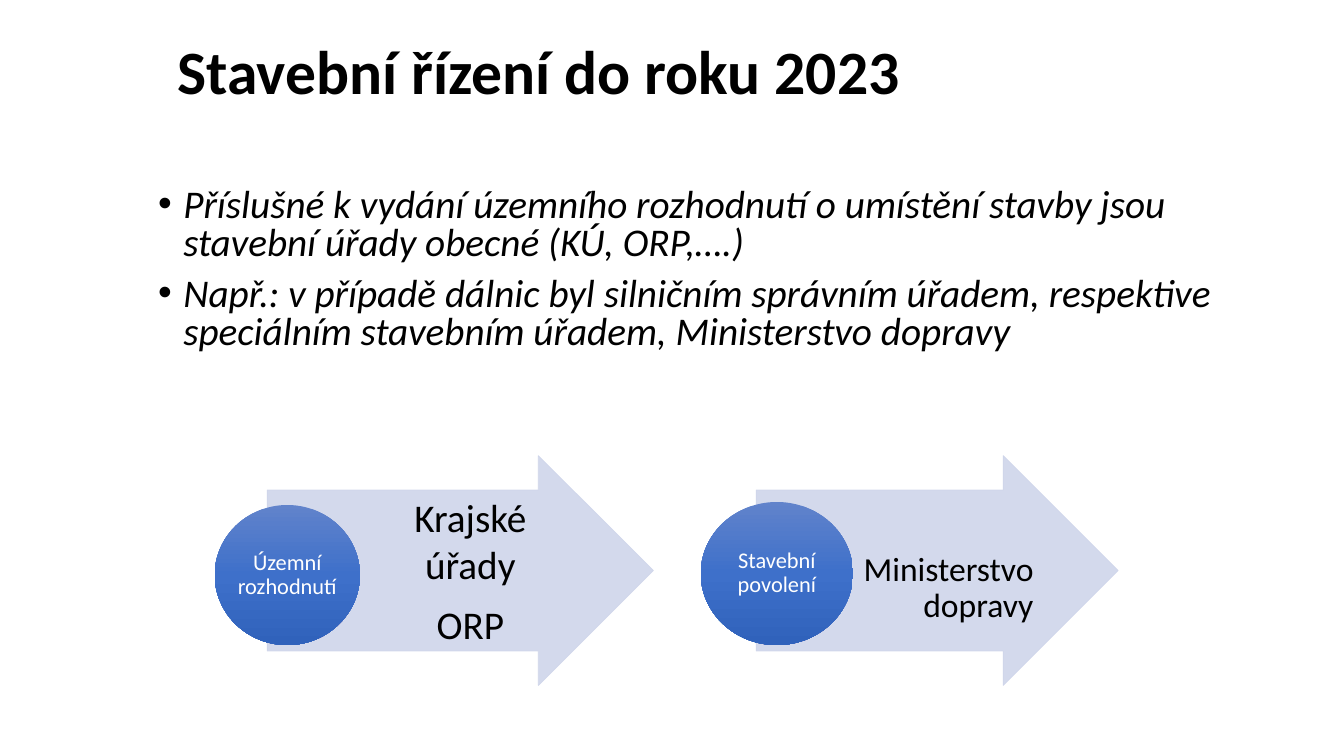
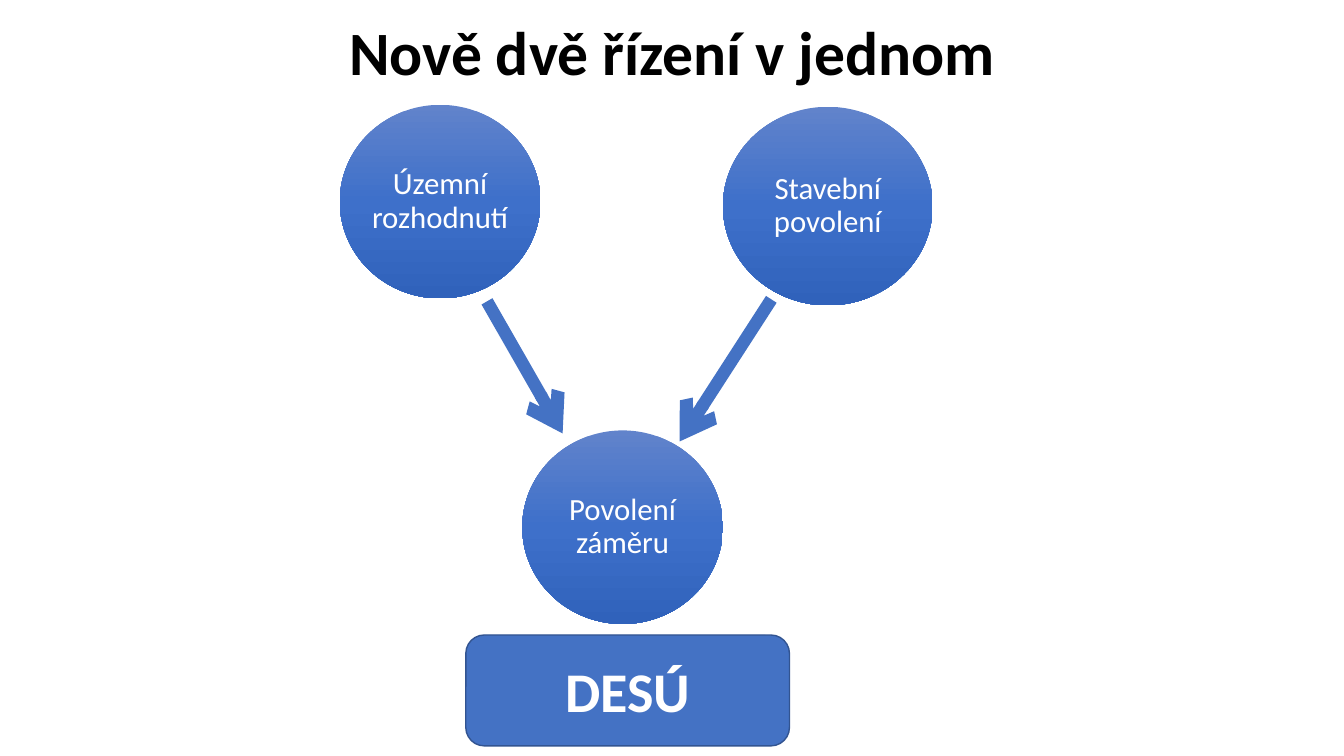
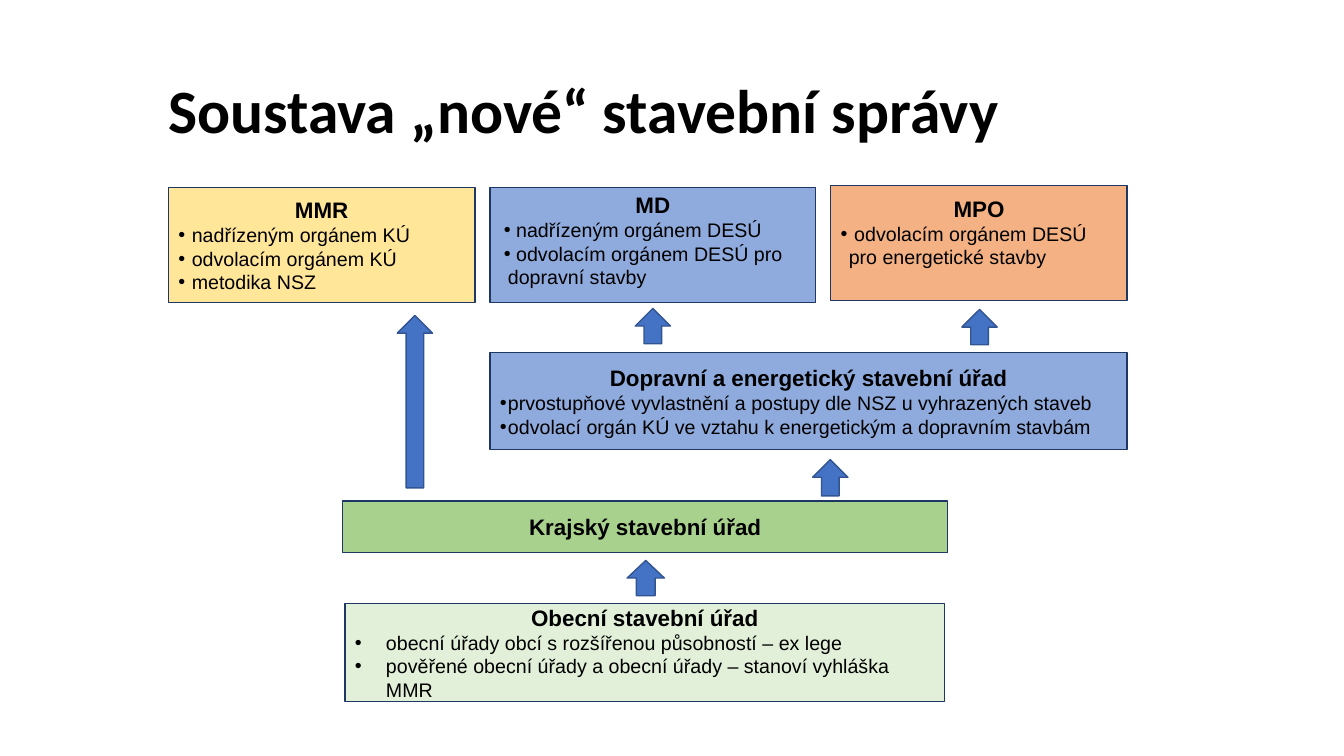
from lxml.etree import SubElement
from pptx import Presentation
from pptx.dml.color import RGBColor
from pptx.enum.shapes import MSO_CONNECTOR, MSO_SHAPE
from pptx.enum.text import MSO_ANCHOR, PP_ALIGN
from pptx.oxml import parse_xml
from pptx.oxml.ns import nsdecls, qn
from pptx.util import Inches, Pt

# Shared look
BLUE, BLUE_EDGE, NAVY = "4472C4", "325491", "1F3763"
PALE_BLUE, BOX_BLUE = "CFD5EA", "8FAADC"
BLACK, WHITE = "000000", "FFFFFF"
CIRCLE_STOPS = [(0, "6183CB"), (50, "3E70CA"), (100, "3062BB")]
LEFT, CENTER, RIGHT = PP_ALIGN.LEFT, PP_ALIGN.CENTER, PP_ALIGN.RIGHT
INSETS = (0.1, 0.05, 0.1, 0.05)


def color(value):
    return RGBColor.from_string(value)


def prepare_frame(frame, anchor=MSO_ANCHOR.MIDDLE, insets=INSETS):
    frame.word_wrap = True
    frame.vertical_anchor = anchor
    (frame.margin_left, frame.margin_top,
     frame.margin_right, frame.margin_bottom) = map(Inches, insets)


def write_text(frame, text, size=14, font="Calibri", ink=BLACK, bold=False,
               italic=False, align=LEFT, spacing=1.0, before=0, after=0,
               bullet=None):
    """Add one paragraph; bullet is a (margin, indent) pair in inches."""
    paragraph = frame.paragraphs[0]
    if paragraph.runs:
        paragraph = frame.add_paragraph()
    paragraph.alignment = align
    paragraph.line_spacing = spacing
    paragraph.space_before, paragraph.space_after = Pt(before), Pt(after)
    if bullet:
        properties = paragraph._p.get_or_add_pPr()
        margin, indent = bullet
        properties.set("marL", str(Inches(margin)))
        properties.set("indent", str(Inches(indent)))
        SubElement(properties, qn("a:buFont")).set("typeface", "Arial")
        SubElement(properties, qn("a:buChar")).set("char", "•")
    run = paragraph.add_run()
    run.text = text
    run.font.name, run.font.size = font, Pt(size)
    run.font.bold, run.font.italic = bold, italic
    run.font.color.rgb = color(ink)


def add_text_box(slide, bounds, **frame_format):
    box = slide.shapes.add_textbox(*map(Inches, bounds))
    prepare_frame(box.text_frame, **frame_format)
    return box.text_frame


def add_title(slide, text, bounds, align=LEFT):
    write_text(add_text_box(slide, bounds), text, size=44, bold=True,
               align=align, spacing=0.9)


def add_shape(slide, kind, bounds, fill=None, edge=None, width=1):
    shape = slide.shapes.add_shape(kind, *map(Inches, bounds))
    shape.shadow.inherit = False
    if fill:
        shape.fill.solid()
        shape.fill.fore_color.rgb = color(fill)
    if edge:
        shape.line.color.rgb = color(edge)
        shape.line.width = Pt(width)
    else:
        shape.line.fill.background()
    return shape


def add_circle(slide, text, bounds, size, inset):
    circle = add_shape(slide, MSO_SHAPE.OVAL, bounds)
    stops = "".join(
        f'<a:gs pos="{position * 1000}"><a:srgbClr val="{value}"/></a:gs>'
        for position, value in CIRCLE_STOPS)
    gradient = parse_xml(
        f'<a:gradFill {nsdecls("a")} rotWithShape="1"><a:gsLst>{stops}</a:gsLst>'
        '<a:lin ang="5400000" scaled="0"/></a:gradFill>')
    circle._element.spPr.find(qn("a:prstGeom")).addnext(gradient)
    prepare_frame(circle.text_frame, insets=(inset,) * 4)
    write_text(circle.text_frame, text, size=size, ink=WHITE, align=CENTER,
               spacing=0.9)


def add_process_arrow(slide, bounds):
    arrow = add_shape(slide, MSO_SHAPE.RIGHT_ARROW, bounds, PALE_BLUE,
                      PALE_BLUE, 0.5)
    arrow.adjustments[0], arrow.adjustments[1] = 0.7, 0.5
    for value in arrow._element.spPr.iter(qn("a:srgbClr")):
        SubElement(value, qn("a:alpha")).set("val", "90000")


def add_line_arrow(slide, start, end):
    connector = slide.shapes.add_connector(
        MSO_CONNECTOR.STRAIGHT, *map(Inches, start + end))
    connector.line.color.rgb = color(BLUE)
    connector.line.width = Pt(9)
    SubElement(connector.line._get_or_add_ln(), qn("a:tailEnd")).set("type", "arrow")
    SubElement(connector._element.spPr, qn("a:effectLst"))


def add_office(slide, bounds, fill, name, duties=(), bullet=(0.08, -0.08),
               bottom=0.05):
    office = add_shape(slide, MSO_SHAPE.RECTANGLE, bounds, fill, NAVY)
    frame = office.text_frame
    prepare_frame(frame, insets=(0.1, 0.05, 0.1, bottom))
    write_text(frame, name, size=16, font="Arial", bold=True, align=CENTER)
    for duty in duties:
        write_text(frame, duty, font="Arial", bullet=bullet)


def build_old_procedure(slide):
    add_title(slide, "Stavební řízení do roku 2023", (1.66, 0.01, 11.67, 1.45))
    body = add_text_box(slide, (1.47, 1.82, 10.95, 1.86), anchor=MSO_ANCHOR.TOP)
    points = [
        "Příslušné k vydání územního rozhodnutí o umístění stavby jsou "
        "stavební úřady obecné (KÚ, ORP,….)",
        "Např.: v případě dálnic byl silničním správním úřadem, respektive "
        "speciálním stavebním úřadem, Ministerstvo dopravy",
    ]
    for index, point in enumerate(points):
        write_text(body, point, size=28, italic=True, spacing=0.8,
                   before=10 if index else 0, bullet=(0.25, -0.25))

    # Territorial decision
    add_process_arrow(slide, (2.65, 4.52, 3.83, 2.28))
    offices = add_text_box(slide, (3.61, 4.86, 2.07, 1.6),
                           insets=(0.08, 0.02, 0.04, 0.02))
    write_text(offices, "Krajské úřady", size=28, align=CENTER, after=9)
    write_text(offices, "ORP", size=28, align=CENTER)
    add_circle(slide, "Územní rozhodnutí", (2.13, 5.01, 1.44, 1.39), 16, 0.01)

    # Building permit
    add_process_arrow(slide, (7.5, 4.52, 3.59, 2.28))
    ministry = add_text_box(slide, (8.39, 5.04, 1.89, 1.6),
                            insets=(0.07, 0.02, 0.03, 0.02))
    write_text(ministry, "Ministerstvo dopravy", size=24, align=RIGHT, spacing=0.9)
    add_circle(slide, "Stavební povolení", (6.95, 4.98, 1.51, 1.42), 16, 0.01)


def build_merged_procedure(slide):
    add_title(slide, "Nově dvě řízení v jednom", (0.92, 0, 11.5, 1.11), CENTER)
    for text, bounds in [
        ("Územní rozhodnutí", (3.37, 1.04, 1.99, 1.92)),
        ("Stavební povolení", (7.17, 1.06, 2.08, 1.97)),
        ("Povolení záměru", (5.18, 4.27, 1.99, 1.92)),
    ]:
        add_circle(slide, text, bounds, 22, 0.02)
    add_line_arrow(slide, (4.83, 2.99), (5.58, 4.3))
    add_line_arrow(slide, (7.65, 2.97), (6.74, 4.38))
    authority = add_shape(slide, MSO_SHAPE.ROUNDED_RECTANGLE,
                          (4.62, 6.3, 3.21, 1.1), BLUE, BLUE_EDGE)
    prepare_frame(authority.text_frame)
    write_text(authority.text_frame, "DESÚ", size=40, ink=WHITE, bold=True,
               align=CENTER)


def build_new_system(slide):
    add_title(slide, "Soustava „nové“ stavební správy", (1.57, 0.4, 10.85, 1.45))

    # Ministries
    add_office(slide, (1.67, 1.86, 3.04, 1.14), "FFE699", "MMR",
               [" nadřízeným orgánem KÚ", " odvolacím orgánem KÚ", " metodika NSZ"])
    add_office(slide, (4.86, 1.86, 3.23, 1.14), BOX_BLUE, "MD",
               [" nadřízeným orgánem DESÚ",
                " odvolacím orgánem DESÚ pro dopravní stavby"],
               bullet=(0.08, -0.04), bottom=0.15)
    add_office(slide, (8.24, 1.84, 2.94, 1.14), "F4B183", "MPO",
               [" odvolacím orgánem DESÚ pro energetické stavby"], bottom=0.27)

    # Building offices
    add_office(slide, (4.86, 3.5, 6.32, 0.96), BOX_BLUE,
               "Dopravní a energetický stavební úřad",
               ["prvostupňové vyvlastnění a postupy dle NSZ u vyhrazených staveb",
                "odvolací orgán KÚ ve vztahu k energetickým a dopravním stavbám"])
    add_office(slide, (3.4, 4.97, 6, 0.51), "A9D18E", "Krajský stavební úřad")
    add_office(slide, (3.42, 5.99, 5.95, 0.97), "E2F0D9", "Obecní stavební úřad",
               ["obecní úřady obcí s rozšířenou působností – ex lege",
                "pověřené obecní úřady a obecní úřady – stanoví vyhláška MMR"],
               bullet=(0.31, -0.31))

    # Arrows to the superior office
    for bounds in [(9.54, 3.07, 0.35, 0.35), (6.3, 3.06, 0.35, 0.35),
                   (8.06, 4.56, 0.35, 0.36), (3.94, 3.13, 0.35, 1.71),
                   (6.22, 5.56, 0.37, 0.35)]:
        add_shape(slide, MSO_SHAPE.UP_ARROW, bounds, BLUE, BLUE_EDGE)


def main():
    presentation = Presentation()
    presentation.slide_width = Inches(13.33)
    presentation.slide_height = Inches(7.5)
    for build in (build_old_procedure, build_merged_procedure, build_new_system):
        build(presentation.slides.add_slide(presentation.slide_layouts[6]))
    presentation.save("out.pptx")


if __name__ == "__main__":
    main()
